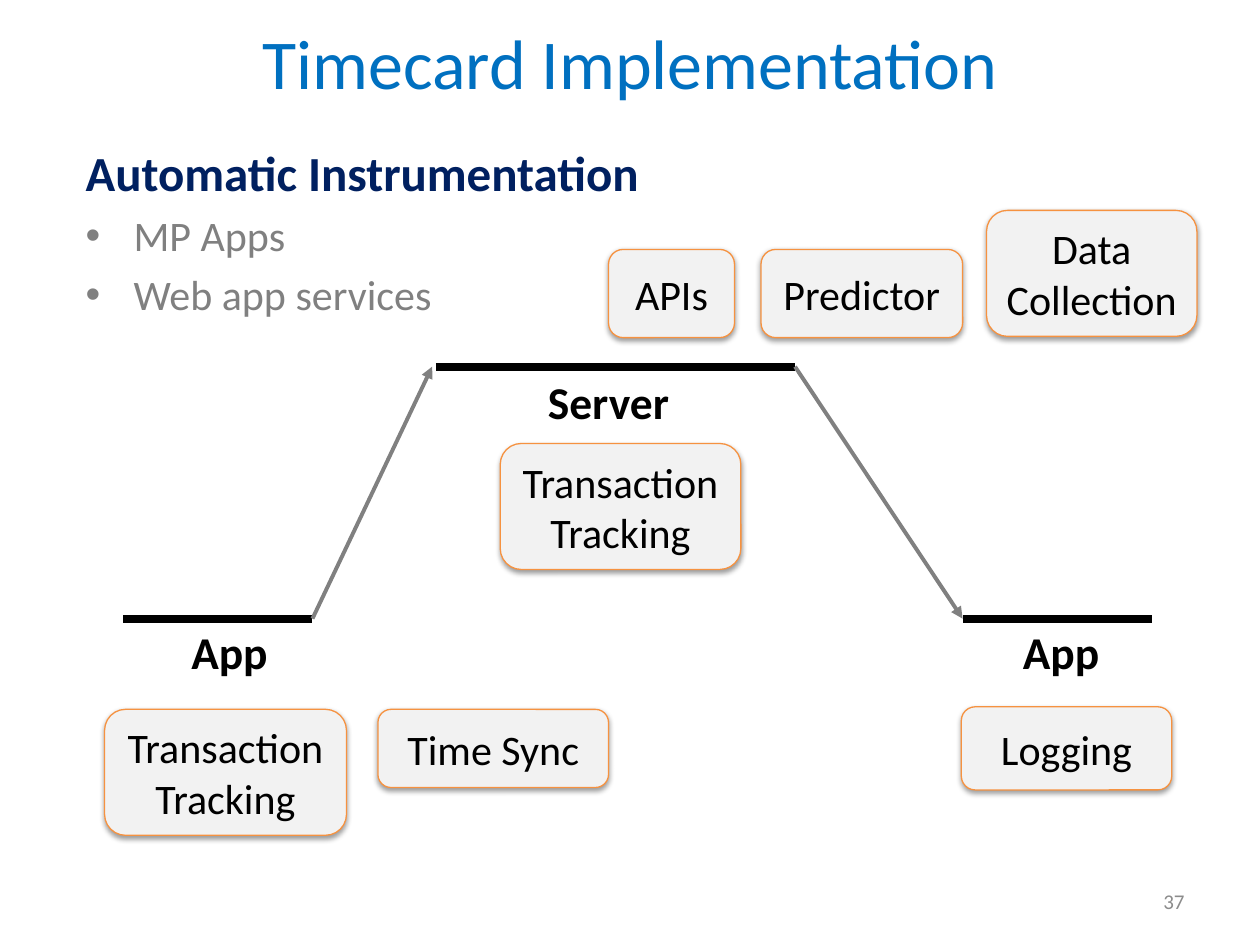
from lxml import etree
from pptx import Presentation
from pptx.dml.color import RGBColor
from pptx.enum import shapes, text
from pptx.oxml import parse_xml
from pptx.oxml.ns import nsdecls, qn
from pptx.util import Inches, Pt

THEME = dict(
    font="Calibri",
    title=("0070C0", 40), head=("002060", 28), item=("808080", 24),
    label=("000000", 26), box=("000000", 24), num=("8C8C8C", 12),
    fill="F2F2F2", edge="F69240", bar="000000", arrow="808080",
)

TITLE = "Timecard Implementation"
BODY = [("Automatic Instrumentation", "head"), ("MP Apps", "item"), ("Web app services", "item")]
LOW, HIGH = 4.91, 2.91
BARS = [(0.98, 2.48, LOW), (3.46, 6.31, HIGH), (7.64, 9.14, LOW)]
ARROWS = [(2.48, LOW, 3.43, HIGH), (6.31, HIGH, 7.64, LOW)]
LABELS = [("App", 1.42, 4.9, 0.82), ("App", 8.02, 4.9, 0.82), ("Server", 4.25, 2.92, 1.17)]
TRACK = ["Transaction", "Tracking"]
BOXES = [
    (TRACK, 0.83, 5.63, 1.92, 1),
    (TRACK, 3.97, 3.52, 1.91, 1),
    (["Logging"], 7.63, 5.61, 1.67, 0.66),
    (["Predictor"], 6.04, 1.98, 1.6, 0.7),
    (["Time Sync"], 3, 5.63, 1.83, 0.62),
    (["Data Collection"], 7.83, 1.67, 1.67, 1),
    (["APIs"], 4.83, 1.98, 1, 0.7),
]
SHADOW = (
    f'<a:effectLst {nsdecls("a")}><a:outerShdw blurRad="40000" dist="20000" dir="5400000" '
    'rotWithShape="0"><a:srgbClr val="000000"><a:alpha val="38000"/></a:srgbClr>'
    '</a:outerShdw></a:effectLst>'
)


def color(name):
    return RGBColor.from_string(name)


def place(shape, *dims):
    shape.left, shape.top, shape.width, shape.height = map(Inches, dims)


def write(para, words, style, bold=False, align=None):
    run = para.add_run()
    run.text = words
    tint, size = THEME[style]
    run.font.name, run.font.size, run.font.bold = THEME["font"], Pt(size), bold
    run.font.color.rgb = color(tint)
    para.alignment = align


def lines(frame, rows, style, **kw):
    for i, row in enumerate(rows):
        para = frame.add_paragraph() if i else frame.paragraphs[0]
        write(para, row, style, **kw)


def link(slide, x1, y1, x2, y2, tint, width, head=False):
    line = slide.shapes.add_connector(
        shapes.MSO_CONNECTOR.STRAIGHT, *map(Inches, (x1, y1, x2, y2)))
    line.line.color.rgb = color(tint)
    line.line.width = Pt(width)
    if head:
        etree.SubElement(line.line._get_or_add_ln(), qn("a:tailEnd"), type="triangle")
    etree.SubElement(line._element.spPr, qn("a:effectLst"))


def label(slide, words, dims, style, wrap=False, **kw):
    box = slide.shapes.add_textbox(*map(Inches, dims))
    box.text_frame.word_wrap = wrap
    lines(box.text_frame, [words], style, **kw)
    return box.text_frame


def card(slide, rows, *dims):
    box = slide.shapes.add_shape(shapes.MSO_SHAPE.ROUNDED_RECTANGLE, *map(Inches, dims))
    box.fill.solid()
    box.fill.fore_color.rgb = color(THEME["fill"])
    box.line.color.rgb = color(THEME["edge"])
    box.line.width = Pt(0.75)
    box._element.spPr.append(parse_xml(SHADOW))
    box.text_frame.vertical_anchor = text.MSO_ANCHOR.MIDDLE
    lines(box.text_frame, rows, "box", align=text.PP_ALIGN.CENTER)


def fill_body(body):
    place(body, 0.58, 1.08, 5.19, 1.64)
    frame = body.text_frame
    frame.auto_size = text.MSO_AUTO_SIZE.NONE
    for i, (words, style) in enumerate(BODY):
        para = frame.add_paragraph() if i else frame.paragraphs[0]
        write(para, words, style, bold=style == "head")
        props = para._p.get_or_add_pPr()
        dent = Inches(0.38) if style == "item" else 0
        props.set("marL", str(dent))
        props.set("indent", str(-dent))
        if dent:
            etree.SubElement(props, qn("a:buFont"), typeface="Arial")
            etree.SubElement(props, qn("a:buChar"), char="•")
        else:
            etree.SubElement(props, qn("a:buNone"))


def main():
    deck = Presentation()
    deck.slide_width, deck.slide_height = Inches(10), Inches(7.5)
    slide = deck.slides.add_slide(deck.slide_layouts[1])
    title, body = slide.placeholders
    place(title, 0.5, 0.05, 9, 0.87)
    title.text_frame.vertical_anchor = text.MSO_ANCHOR.MIDDLE
    lines(title.text_frame, [TITLE], "title", align=text.PP_ALIGN.CENTER)
    fill_body(body)
    for x1, x2, y in BARS:
        link(slide, x1, y, x2, y, THEME["bar"], 4.5)
    for ends in ARROWS:
        link(slide, *ends, THEME["arrow"], 2.25, head=True)
    for words, x, y, w in LABELS:
        label(slide, words, (x, y, w, 0.54), "label", bold=True)
    for item in BOXES:
        card(slide, *item)
    num = label(slide, "37", (7.17, 6.95, 2.33, 0.4), "num", wrap=True,
                align=text.PP_ALIGN.RIGHT)
    num.vertical_anchor = text.MSO_ANCHOR.MIDDLE
    deck.save("out.pptx")


if __name__ == "__main__":
    main()
